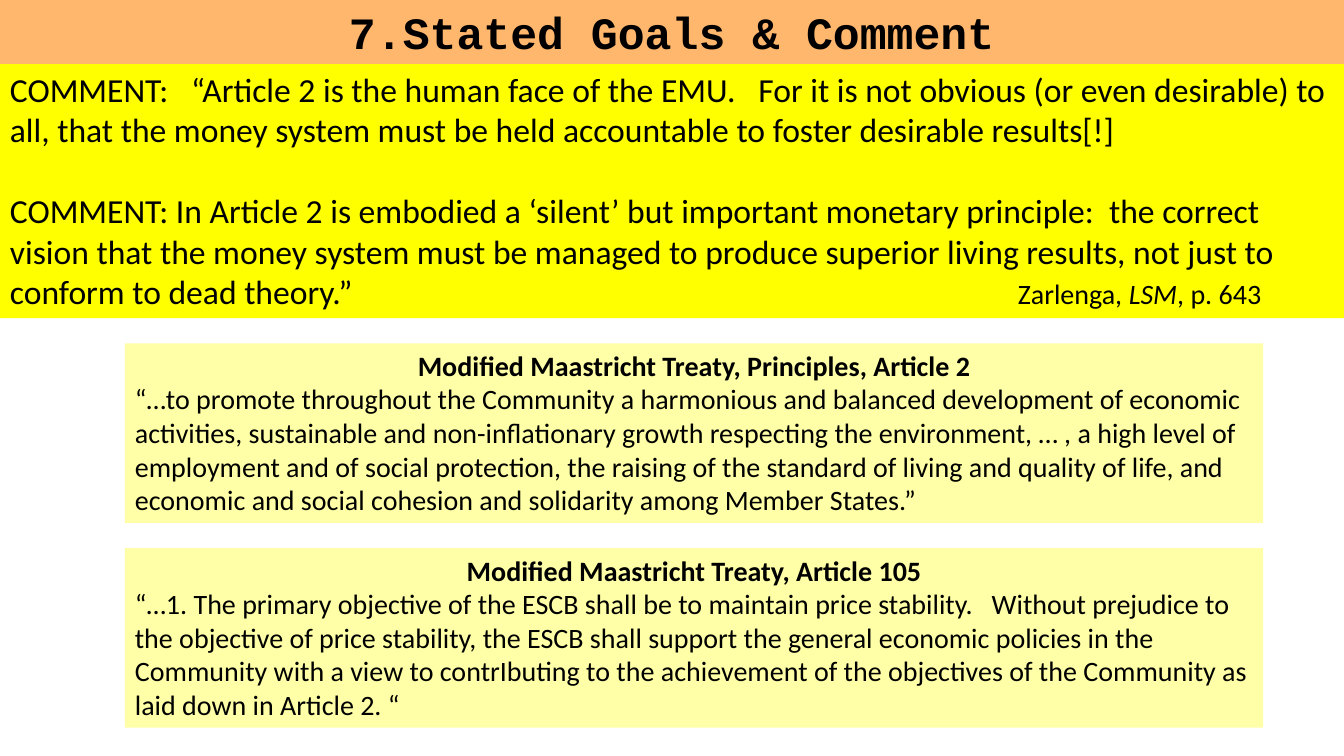
from lxml import etree
from pptx import Presentation
from pptx import util as u
from pptx.dml.color import RGBColor
from pptx.enum import shapes, text
from pptx.oxml.ns import qn

PX = 9525
HUES = {"title": "FFB66D", "note": "FFFF00", "quote": "FFFFA7", "ink": "000000"}
QUOTES = [
    ("Modified Maastricht Treaty, Principles, Article 2",
     "“…to promote throughout the Community a harmonious and balanced development of "
     "economic activities, sustainable and non-inflationary growth respecting the "
     "environment, … , a high level of employment and of social protection, the raising "
     "of the standard of living and quality of life, and economic and social cohesion "
     "and solidarity among Member States.”"),
    ("Modified Maastricht Treaty, Article 105",
     "“…1. The primary objective of the ESCB shall be to maintain price stability.   "
     "Without prejudice to the objective of price stability, the ESCB shall support the "
     "general economic policies in the Community with a view to contrIbuting to the "
     "achievement of the objectives of the Community as laid down in Article 2. “"),
]
NOTES = [
    "COMMENT:   “Article 2 is the human face of the EMU.   For it is not obvious (or even "
    "desirable) to all, that the money system must be held accountable to foster "
    "desirable results[!]",
    "COMMENT: In Article 2 is embodied a ‘silent’ but important monetary principle:  the "
    "correct vision that the money system must be managed to produce superior living "
    "results, not just to conform to dead theory.”\t",
]
CITE = [("Zarlenga, ", False), ("LSM", True), (", p. 643", False)]


def px(n):
    return u.Emu(n * PX)


def paint(shape, hue):
    shape.fill.solid()
    shape.fill.fore_color.rgb = RGBColor.from_string(HUES[hue])
    shape.line.fill.background()
    frame = shape.text_frame
    frame.word_wrap = True
    frame.vertical_anchor = text.MSO_ANCHOR.TOP
    frame.auto_size = text.MSO_AUTO_SIZE.SHAPE_TO_FIT_TEXT
    return frame


def panel(slide, x, y, w, h, hue):
    shape = slide.shapes.add_shape(shapes.MSO_SHAPE.RECTANGLE, px(x), px(y), px(w), px(h))
    shape.shadow.inherit = False
    return paint(shape, hue)


def style(par, size, face="Calibri", bold=False, center=False):
    par.alignment = text.PP_ALIGN.CENTER if center else text.PP_ALIGN.LEFT
    font = par.font
    font.name, font.size, font.bold = face, u.Pt(size), bold
    font.color.rgb = RGBColor.from_string(HUES["ink"])


def title(slide):
    head = slide.shapes.title
    head.left, head.top, head.width, head.height = px(0), px(0), px(1280), px(61)
    par = paint(head, "title").paragraphs[0]
    par.text = "Stated Goals & Comment"
    props = par._p.get_or_add_pPr()
    props.set("marL", str(px(48)))
    props.set("indent", str(px(-48)))
    etree.SubElement(props, qn("a:buFont"), typeface="+mj-lt")
    etree.SubElement(props, qn("a:buAutoNum"), type="arabicPeriod", startAt="7")
    style(par, 32, "Courier New", bold=True, center=True)


def quote(slide, y, name, body):
    frame = panel(slide, 119, y, 1084, 171, "quote")
    frame.text = name + "\n" + body
    top, rest = frame.paragraphs
    style(top, 20, bold=True, center=True)
    style(rest, 20)


def comment(slide):
    frame = panel(slide, 0, 61, 1280, 242, "note")
    frame.text = "\n".join(NOTES)
    last = frame.paragraphs[-1]
    tabs = etree.SubElement(last._p.get_or_add_pPr(), qn("a:tabLst"))
    etree.SubElement(tabs, qn("a:tab"), pos=str(px(960)), algn="l")
    for par in frame.paragraphs:
        style(par, 24)
    last.space_before = u.Pt(29)
    for words, slant in CITE:
        run = last.add_run()
        run.text = words
        run.font.size, run.font.italic = u.Pt(20), slant


def main():
    deck = Presentation()
    deck.slide_width, deck.slide_height = px(1280), px(720)
    slide = deck.slides.add_slide(deck.slide_layouts[5])
    title(slide)
    for i, (name, body) in enumerate(QUOTES):
        quote(slide, 327 + 195 * i, name, body)
    comment(slide)
    deck.save("out.pptx")


if __name__ == "__main__":
    main()
